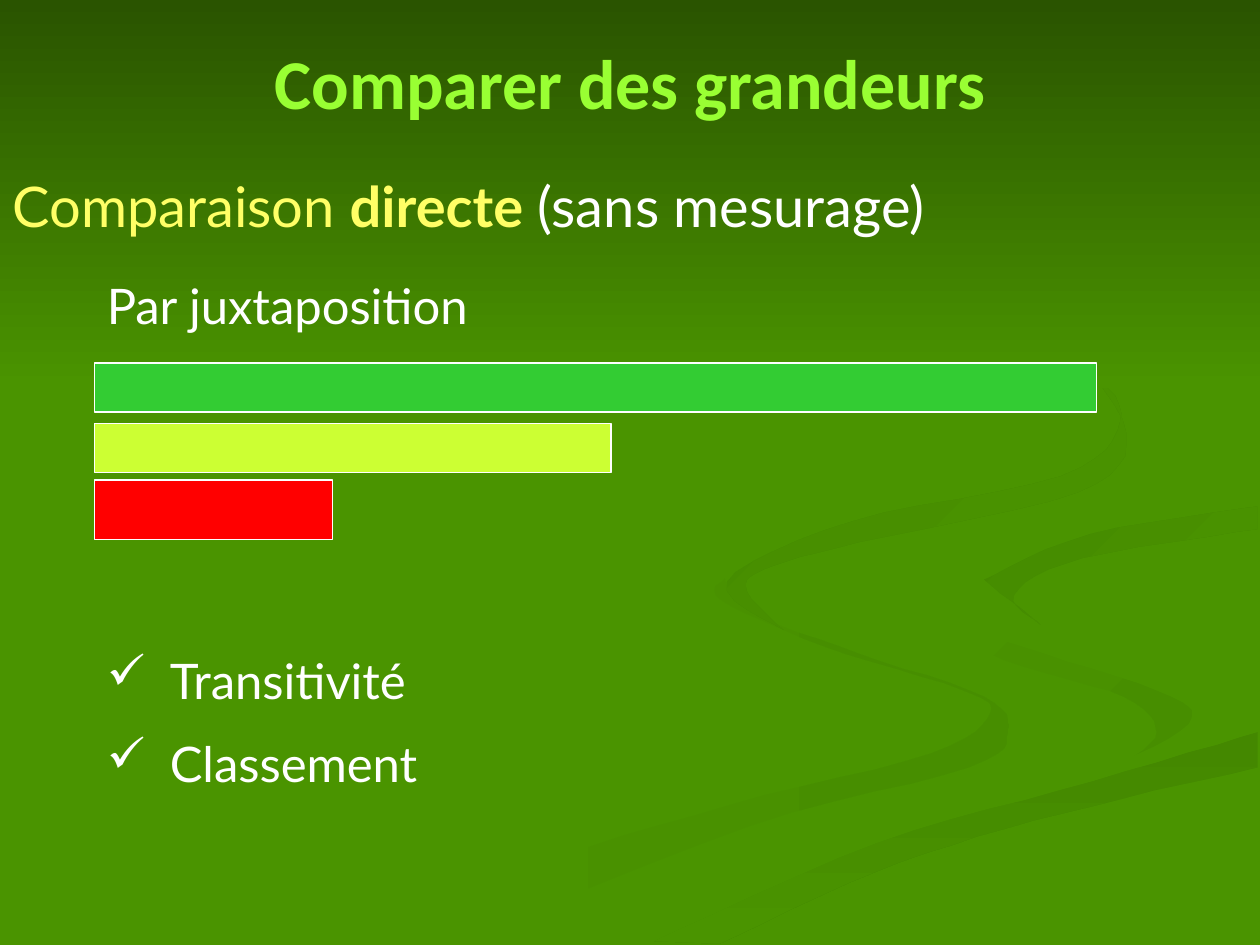
from dataclasses import dataclass
from typing import NamedTuple

from lxml import etree
from pptx import Presentation
from pptx import util as u
from pptx.dml.color import RGBColor
from pptx.enum import shapes, text
from pptx.oxml.ns import qn

# The slide is a grid of 1000 columns by 750 rows, each a hundredth of an inch.
CELL = 9144
COLUMNS, ROWS = 1000, 750
CURVE_STEPS = 6

Point = tuple[int, int]
Edge = list[Point]


@dataclass(frozen=True)
class Theme:
    background: str = "4A9400"
    header: str = "2A5400"
    light_shade: str = "478E00"
    shade: str = "458A00"
    dark_shade: str = "448800"
    title: str = "99FF33"
    accent: str = "FFFF66"
    text: str = "FFFFFF"
    title_font: str = "Calibri"
    body_font: str = "Lato"
    title_size: int = 40
    lead_size: int = 32
    text_size: int = 28
    line_width: float = 0.75


THEME = Theme()


class Box(NamedTuple):
    left: int
    top: int
    width: int
    height: int


class Bar(NamedTuple):
    box: Box
    color: str


class Run(NamedTuple):
    words: str
    color: str = THEME.text
    bold: bool = False


class Ribbon(NamedTuple):
    """An outline of smooth edges, joined end to end."""
    edges: list[Edge]
    start: str
    end: str
    angle: int = 0


BAR_LEFT = 75
BARS = [
    Bar(Box(BAR_LEFT, 288, 795, 39), "33CC33"),
    Bar(Box(BAR_LEFT, 336, 410, 39), "CCFF33"),
    Bar(Box(BAR_LEFT, 381, 189, 47), "FF0000"),
]

# Edges shared by neighbouring ribbons, so that they meet without a gap.
LOWER = [(998, 581), (867, 620), (696, 669), (519, 747)]
BRANCH = [(998, 402), (865, 424), (781, 460)]
BEND = [(724, 464), (745, 490), (830, 519), (930, 553), (943, 575)]

RIBBONS = [
    Ribbon([[(575, 459), (572, 476), (654, 513), (762, 547), (786, 566), (739, 598), (579, 639),
             (417, 690), (300, 749)],
            [(361, 749), (594, 656), (769, 609), (800, 581), (781, 553), (682, 519), (594, 485),
             (575, 459)]], THEME.background, THEME.light_shade),
    Ribbon([BEND + [(894, 605)],
            [(894, 605), (918, 581), (892, 553), (797, 524), (733, 488), (724, 464)]],
           THEME.background, THEME.light_shade, 45),
    Ribbon([LOWER, [(571, 749), (695, 692), (821, 651), (998, 609)]],
           THEME.dark_shade, THEME.background, 90),
    Ribbon([[(998, 387), (874, 408), (755, 432)] + BEND
            + [(869, 611), (704, 655), (573, 703), (477, 749)],
            LOWER[::-1], [(998, 538), (832, 498), (781, 460)], BRANCH[::-1]],
           THEME.background, THEME.background),
    Ribbon([BRANCH, [(781, 460), (826, 496)], [(826, 496), (805, 472), (859, 443), (998, 420)]],
           THEME.shade, THEME.background, 45),
    Ribbon([[(762, 233), (843, 275), (894, 344), (855, 391), (683, 430), (606, 452), (593, 470),
             (622, 500)],
            [(622, 500), (577, 462), (676, 414), (842, 378), (889, 335), (862, 292), (762, 233)]],
           THEME.shade, THEME.background, 45),
    Ribbon([[(0, 0), (0, 308)], [(COLUMNS, 308), (COLUMNS, 0)]],
           THEME.header, THEME.background, 90),
]


def color_of(code: str) -> RGBColor:
    return RGBColor.from_string(code)


def smooth(edge: Edge) -> Edge:
    """Return points on a Catmull-Rom curve through the edge's points."""
    padded = [edge[0], *edge, edge[-1]]
    curve = []
    for before, first, second, after in zip(padded, padded[1:], padded[2:], padded[3:]):
        for step in range(CURVE_STEPS):
            t = step / CURVE_STEPS
            curve.append(tuple(
                round(b + t * (c - a + t * (2 * a - 5 * b + 4 * c - d
                                            + t * (3 * b - a - 3 * c + d))) / 2)
                for a, b, c, d in zip(before, first, second, after)))
    return [*curve, edge[-1]]


def place(shape, box: Box) -> None:
    shape.left, shape.top, shape.width, shape.height = (u.Emu(cells * CELL) for cells in box)


def draw_ribbon(slide, ribbon: Ribbon) -> None:
    points = [point for edge in ribbon.edges for point in smooth(edge)]
    builder = slide.shapes.build_freeform(*points[0], scale=CELL)
    builder.add_line_segments(points[1:], close=True)
    shape = builder.convert_to_shape()
    shape.shadow.inherit = False
    shape.line.fill.background()
    if ribbon.start == ribbon.end:
        shape.fill.solid()
        shape.fill.fore_color.rgb = color_of(ribbon.start)
        return
    shape.fill.gradient()
    shape.fill.gradient_angle = -ribbon.angle % 360
    for stop, code in zip(shape.fill.gradient_stops, (ribbon.start, ribbon.end)):
        stop.color.rgb = color_of(code)


def draw_bar(slide, bar: Bar) -> None:
    shape = slide.shapes.add_shape(shapes.MSO_SHAPE.RECTANGLE, 0, 0, 0, 0)
    place(shape, bar.box)
    shape.shadow.inherit = False
    shape.fill.solid()
    shape.fill.fore_color.rgb = color_of(bar.color)
    shape.line.color.rgb = color_of(THEME.text)
    shape.line.width = u.Pt(THEME.line_width)


def write(shape, box: Box, paragraphs: list[list[Run]], *, size: int, font: str = THEME.body_font,
          align=text.PP_ALIGN.LEFT, anchor=text.MSO_ANCHOR.TOP, hanging: int = 0,
          bullet: str = "") -> None:
    """Move a shape and fill it with text; hanging is the indent in grid columns."""
    place(shape, box)
    frame = shape.text_frame
    frame.word_wrap = True
    frame.auto_size = text.MSO_AUTO_SIZE.NONE
    frame.vertical_anchor = anchor
    for index, runs in enumerate(paragraphs):
        paragraph = frame.add_paragraph() if index else frame.paragraphs[0]
        paragraph.alignment = align
        paragraph.space_before = u.Pt(size / 2 if index else 0)
        properties = paragraph._p.get_or_add_pPr()
        properties.set("marL", str(hanging * CELL))
        properties.set("indent", str(-hanging * CELL))
        mark = etree.SubElement(properties, qn("a:buChar" if bullet else "a:buNone"))
        if bullet:
            mark.set("char", bullet)
        for item in runs:
            run = paragraph.add_run()
            run.text = item.words
            run.font.name, run.font.size, run.font.bold = font, u.Pt(size), item.bold
            run.font.color.rgb = color_of(item.color)


def main() -> None:
    presentation = Presentation()
    presentation.slide_width, presentation.slide_height = u.Emu(COLUMNS * CELL), u.Emu(ROWS * CELL)
    slide = presentation.slides.add_slide(presentation.slide_layouts[1])
    slide.background.fill.solid()
    slide.background.fill.fore_color.rgb = color_of(THEME.background)
    title, body = slide.placeholders
    for ribbon in RIBBONS:
        draw_ribbon(slide, ribbon)
    for placeholder in (title, body):  # bring the text in front of the ribbons
        slide.shapes.element.append(placeholder.element)
    write(title, Box(50, 30, 900, 69), [[Run("Comparer des grandeurs", THEME.title, True)]],
          size=THEME.title_size, font=THEME.title_font, align=text.PP_ALIGN.CENTER,
          anchor=text.MSO_ANCHOR.MIDDLE)
    write(body, Box(0, 131, COLUMNS, 79),
          [[Run("Comparaison ", THEME.accent), Run("directe", THEME.accent, True),
            Run(" (sans mesurage)")]], size=THEME.lead_size, hanging=38)
    for bar in BARS:
        draw_bar(slide, bar)
    write(slide.shapes.add_textbox(0, 0, 0, 0), Box(BAR_LEFT, 214, 567, 57),
          [[Run("Par juxtaposition")]], size=THEME.text_size)
    write(slide.shapes.add_textbox(0, 0, 0, 0), Box(BAR_LEFT, 511, 410, 127),
          [[Run("Transitivité")], [Run("Classement")]], size=THEME.text_size, hanging=50, bullet="✓")
    presentation.save("out.pptx")


if __name__ == "__main__":
    main()
